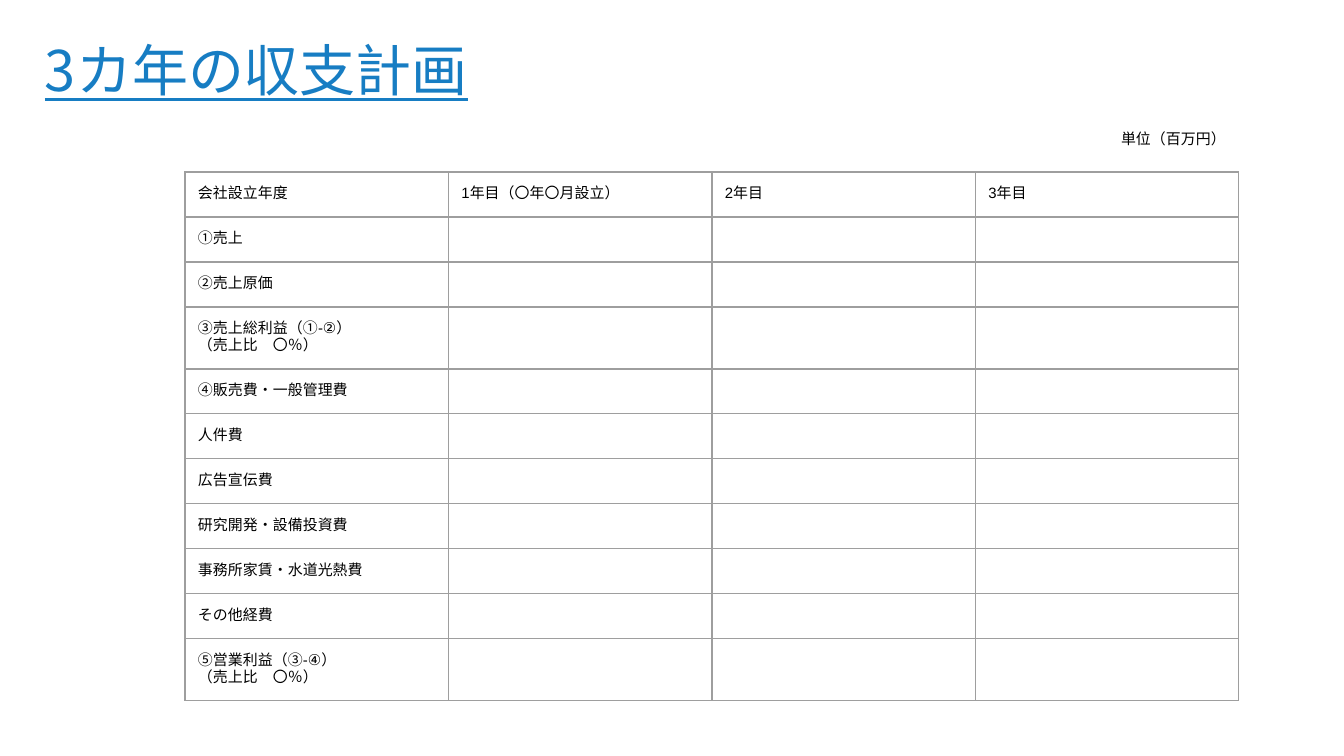
from dataclasses import dataclass

from lxml import etree
from pptx import Presentation
from pptx.dml.color import RGBColor
from pptx.enum.text import MSO_ANCHOR
from pptx.oxml.ns import qn
from pptx.util import Pt

TOP = MSO_ANCHOR.TOP

TITLE = "3カ年の収支計画"
UNIT = "単位（百万円）"
YEARS = ["会社設立年度", "1年目（〇年〇月設立）", "2年目", "3年目"]
ITEMS = [
    ["①売上"],
    ["②売上原価"],
    ["③売上総利益（①-②）", "（売上比　〇％）"],
    ["④販売費・一般管理費"],
    ["人件費"],
    ["広告宣伝費"],
    ["研究開発・設備投資費"],
    ["事務所家賃・水道光熱費"],
    ["その他経費"],
    ["⑤営業利益（③-④）", "（売上比　〇％）"],
]


@dataclass(frozen=True)
class Theme:
    title_font: str = "Noto Sans CJK JP"
    body_font: str = "Arial"
    title_size: int = 30
    body_size: int = 8
    title_color: str = "177DC3"
    body_color: str = "000000"
    border_color: str = "9E9E9E"
    border_width: float = 0.75


THEME = Theme()
EMU_PER_PX = 914400 / 134.4
PADDING = 13
ROW_HEIGHTS = {1: 45, 2: 62}
COLUMN_WIDTH = 263.5


def px(length):
    return round(length * EMU_PER_PX)


def add_run(paragraph, text, font, size, color, underline=None):
    run = paragraph.add_run()
    run.text = text
    run.font.name = font
    run.font.size = Pt(size)
    run.font.color.rgb = RGBColor.from_string(color)
    run.font.underline = underline
    east_asian = etree.SubElement(run.font._element, qn("a:ea"))
    east_asian.set("typeface", font)


def add_body_run(paragraph, text):
    add_run(paragraph, text, THEME.body_font, THEME.body_size, THEME.body_color)


def set_margins(holder, left, top, right, bottom):
    holder.margin_left, holder.margin_top = px(left), px(top)
    holder.margin_right, holder.margin_bottom = px(right), px(bottom)


def add_label(slide, box, margins):
    frame = slide.shapes.add_textbox(*map(px, box)).text_frame
    frame.word_wrap = True
    frame.vertical_anchor = TOP
    set_margins(frame, *margins)
    return frame.paragraphs[0]


def add_borders(cell):
    properties = cell._tc.get_or_add_tcPr()
    for position, side in enumerate(("lnL", "lnR", "lnT", "lnB")):
        line = etree.Element(qn(f"a:{side}"), w=str(Pt(THEME.border_width)))
        fill = etree.SubElement(line, qn("a:solidFill"))
        etree.SubElement(fill, qn("a:srgbClr"), val=THEME.border_color)
        properties.insert(position, line)


def fill_cell(cell, lines):
    cell.fill.background()
    cell.vertical_anchor = TOP
    set_margins(cell, *[PADDING] * 4)
    add_borders(cell)
    paragraph = cell.text_frame.paragraphs[0]
    for index, line in enumerate(lines):
        if index:
            paragraph.add_line_break()
        add_body_run(paragraph, line)
    end = etree.SubElement(paragraph._p, qn("a:endParaRPr"), sz=str(THEME.body_size * 100))
    for script in ("latin", "ea"):
        etree.SubElement(end, qn(f"a:{script}"), typeface=THEME.body_font)


def add_plan(slide):
    rows = [[[year] for year in YEARS]]
    rows += [[item] + [[]] * (len(YEARS) - 1) for item in ITEMS]
    heights = [ROW_HEIGHTS[len(row[0])] for row in rows]
    box = (185, 172, COLUMN_WIDTH * len(YEARS), sum(heights))
    plan = slide.shapes.add_table(len(rows), len(YEARS), *map(px, box)).table
    plan.first_row = plan.horz_banding = False
    for column in plan.columns:
        column.width = px(COLUMN_WIDTH)
    for row, cells, height in zip(plan.rows, rows, heights):
        row.height = px(height)
        for cell, lines in zip(row.cells, cells):
            fill_cell(cell, lines)


def main():
    deck = Presentation()
    deck.slide_width, deck.slide_height = px(1344), px(756)
    slide = deck.slides.add_slide(deck.slide_layouts[6])

    title = add_label(slide, (44, 42, 543, 70), (1, 1, 0, 0))
    title.line_spacing = 0.9
    add_run(title, TITLE, THEME.title_font, THEME.title_size, THEME.title_color, True)

    add_plan(slide)

    unit = add_label(slide, (1108, 121, 132, 46), [PADDING] * 4)
    add_body_run(unit, UNIT)
    deck.save("out.pptx")


if __name__ == "__main__":
    main()
